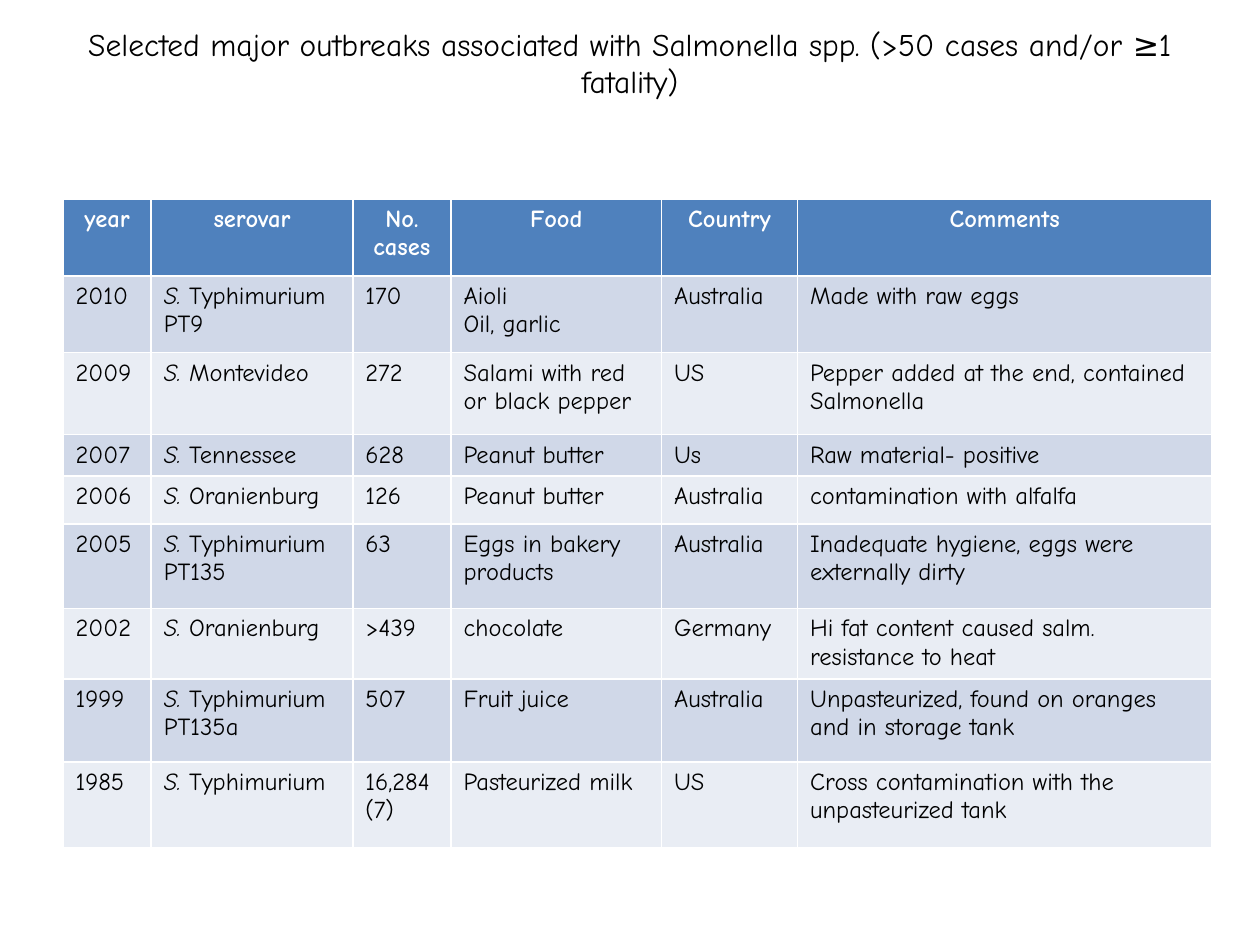
from pptx import Presentation
from pptx import util as u
from pptx.dml.color import RGBColor
from pptx.enum import text

BLACK = RGBColor(0x00, 0x00, 0x00)
WHITE = RGBColor(0xFF, 0xFF, 0xFF)
BLUE = RGBColor(0x4F, 0x81, 0xBD)
BANDS = RGBColor(0xD0, 0xD8, 0xE8), RGBColor(0xE9, 0xED, 0xF4)

COLS, ROWS = 100, 75
GENUS = "S. "

HEAD = ["year", "serovar", "No. cases", "Food", "Country", "Comments"]
CASES = [
    ["2010", "S. Typhimurium PT9", "170", "Aioli\nOil, garlic", "Australia",
     "Made with raw eggs"],
    ["2009", "S. Montevideo", "272", "Salami with red or black pepper", "US",
     "Pepper added at the end, contained Salmonella"],
    ["2007", "S. Tennessee", "628", "Peanut butter", "Us",
     "Raw material- positive"],
    ["2006", "S. Oranienburg", "126", "Peanut butter", "Australia",
     "contamination with alfalfa"],
    ["2005", "S. Typhimurium PT135", "63", "Eggs in bakery products",
     "Australia", "Inadequate hygiene, eggs were externally dirty"],
    ["2002", "S. Oranienburg", ">439", "chocolate", "Germany",
     "Hi fat content caused salm. resistance to heat"],
    ["1999", "S. Typhimurium PT135a", "507", "Fruit juice", "Australia",
     "Unpasteurized, found on oranges and in storage tank"],
    ["1985", "S. Typhimurium", "16,284 (7)", "Pasteurized milk", "US",
     "Cross contamination with the unpasteurized tank"],
]
WIDTHS = [7, 16, 7.8, 16.7, 10.8, 32.9]
HEIGHTS = [6.1, 6.1, 6.5, 3.3, 3.8, 6.7, 5.6, 6.6, 6.8]


class Deck:
    face = "Comic Neue"

    def __init__(self):
        self.prs = Presentation()
        self.prs.slide_width = u.Inches(10)
        self.prs.slide_height = u.Inches(7.5)
        self.slide = self.prs.slides.add_slide(self.prs.slide_layouts[5])

    def wide(self, n):
        return round(self.prs.slide_width * n / COLS)

    def high(self, n):
        return round(self.prs.slide_height * n / ROWS)

    def area(self, left, top, width, height):
        return self.wide(left), self.high(top), self.wide(width), self.high(height)

    def style(self, run, size, color, **form):
        run.font.color.rgb = color
        for key, val in dict(form, name=self.face, size=u.Pt(size)).items():
            setattr(run.font, key, val)

    def title(self, words, *box):
        shape = self.slide.shapes.title
        for key, val in zip(("left", "top", "width", "height"), self.area(*box)):
            setattr(shape, key, val)
        frame = shape.text_frame
        frame.word_wrap = True
        frame.vertical_anchor = text.MSO_ANCHOR.MIDDLE
        par = frame.paragraphs[0]
        par.alignment = text.PP_ALIGN.CENTER
        run = par.add_run()
        run.text = words
        self.style(run, 18, BLACK)

    def cell(self, cell, words, fill, color, bold, align):
        cell.fill.solid()
        cell.fill.fore_color.rgb = fill
        frame = cell.text_frame
        for i, line in enumerate(words.split("\n")):
            par = frame.add_paragraph() if i else frame.paragraphs[0]
            par.alignment = align
            genus = GENUS if line.startswith(GENUS) else ""
            for part, slant in ((genus, True), (line[len(genus):], False)):
                if part:
                    run = par.add_run()
                    run.text = part
                    self.style(run, 14, color, bold=bold, italic=slant)

    def table(self, left, top, widths, heights, data):
        box = self.area(left, top, sum(widths), sum(heights))
        grid = self.slide.shapes.add_table(len(heights), len(widths), *box).table
        for col, size in zip(grid.columns, widths):
            col.width = self.wide(size)
        for row, size in zip(grid.rows, heights):
            row.height = self.high(size)
        for r, line in enumerate(data):
            if r:
                form = BANDS[(r - 1) % 2], BLACK, False, text.PP_ALIGN.LEFT
            else:
                form = BLUE, WHITE, True, text.PP_ALIGN.CENTER
            for c, words in enumerate(line):
                self.cell(grid.cell(r, c), words, *form)


def main():
    deck = Deck()
    deck.table(5, 15.8, WIDTHS, HEIGHTS, [HEAD] + CASES)
    deck.title("Selected major outbreaks associated with Salmonella spp. "
               "(>50 cases and/or ≥1 fatality)", 5, 0.8, 90, 8.3)
    deck.prs.save("out.pptx")


if __name__ == "__main__":
    main()
